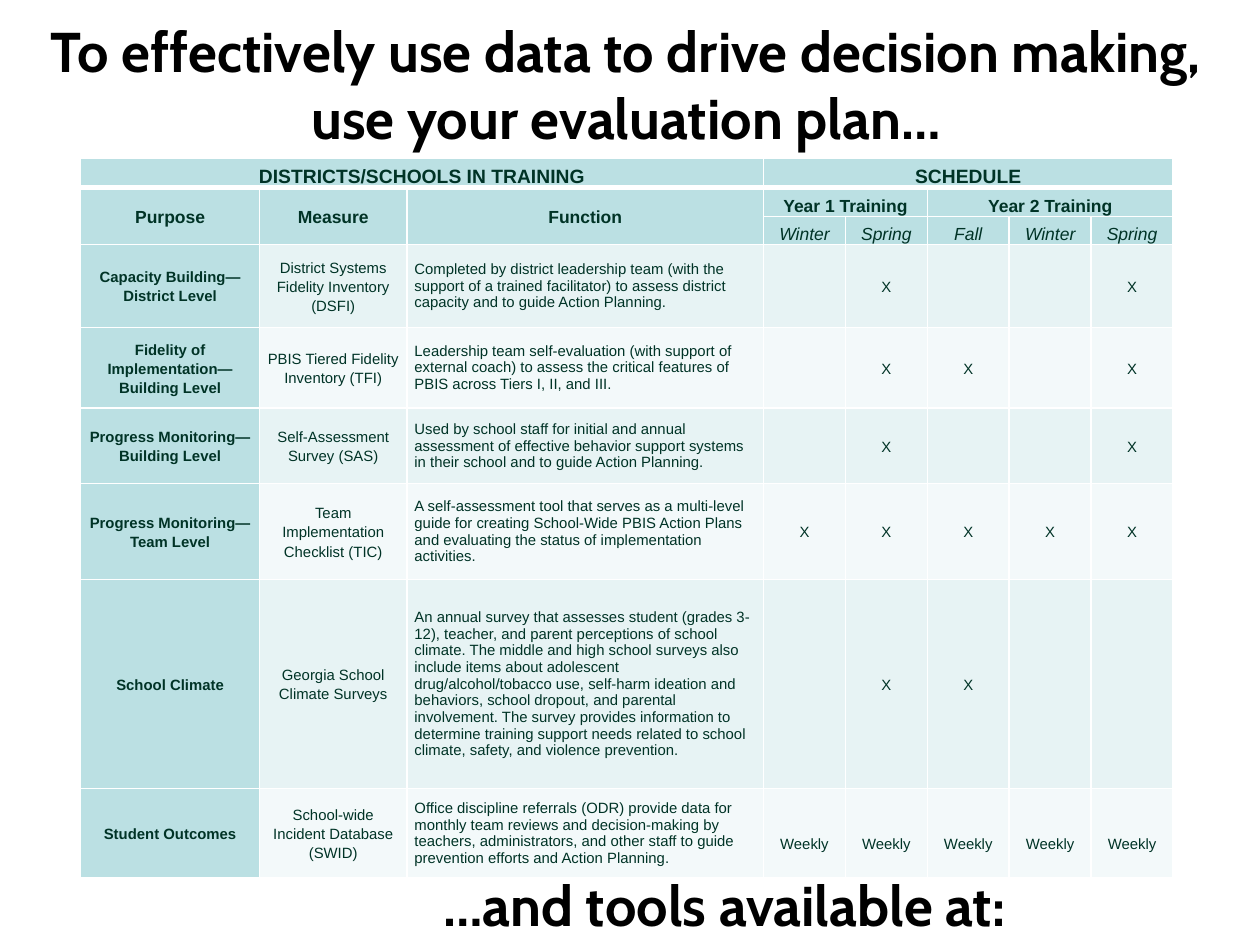
from dataclasses import dataclass
from typing import NamedTuple

from lxml.etree import SubElement
from pptx import Presentation
from pptx.dml.color import RGBColor as Rgb
from pptx.enum.text import MSO_ANCHOR as Anchor, MSO_AUTO_SIZE as Fit, PP_ALIGN as Align
from pptx.oxml.ns import qn
from pptx.util import Inches, Pt


@dataclass(frozen=True)
class Theme:
    black: str = "000000"
    ink: str = "003326"
    head: str = "BBE0E3"
    bands: tuple = ("E7F3F4", "F3F9FA")
    rule: str = "FFFFFF"
    title_font: str = "Cabin"
    font: str = "Arial"
    title: float = 32
    group: float = 11
    label: float = 10
    body: float = 8.5
    thin: float = 1
    thick: float = 3
    lead: float = 1.15


class Box(NamedTuple):
    """Left, top, width and height in percent of the slide."""
    left: float
    top: float
    width: float
    height: float


class Head(NamedTuple):
    text: str
    row: int
    col: int
    rows: int = 1
    cols: int = 1
    size: float = 10
    italic: bool = False


class Tool(NamedTuple):
    purpose: str
    measure: str
    function: str
    marks: tuple
    drop: float = 0


THEME = Theme()
WIDE, HIGH = Inches(10), Inches(7.5)
TITLE = Box(1.6, 1.07, 96.2, 15.73)
CLOSE = Box(33.4, 91.47, 47.4, 8.53)
GRID = Box(6.4, 16.8, 86.7, 76.13)
COLS = [1.42, 1.17, 2.83] + [0.65] * 5
ROWS = [0.23, 0.23, 0.22, 0.66, 0.64, 0.6, 0.76, 1.66, 0.71]
FIRST = 3  # row and column where the tools and the seasons start
SEASONS = ["Winter", "Spring", "Fall", "Winter", "Spring"]

HEADS = [
    Head("DISTRICTS/SCHOOLS IN TRAINING", 0, 0, cols=3, size=THEME.group),
    Head("SCHEDULE", 0, 3, cols=5, size=THEME.group),
    *(Head(text, 1, col, rows=2) for col, text in enumerate(["Purpose", "Measure", "Function"])),
    Head("Year 1 Training", 1, 3, cols=2),
    Head("Year 2 Training", 1, 5, cols=3),
    *(Head(text, 2, col, italic=True) for col, text in enumerate(SEASONS, FIRST)),
]

TOOLS = [
    Tool("Capacity Building—District Level", "District Systems Fidelity Inventory (DSFI)",
         "Completed by district leadership team (with the support of a trained facilitator) "
         "to assess district capacity and to guide Action Planning.",
         ("", "X", "", "", "X")),
    Tool("Fidelity of Implementation—Building Level", "PBIS Tiered Fidelity Inventory (TFI)",
         "Leadership team self-evaluation (with support of external coach) to assess "
         "the critical features of PBIS across Tiers I, II, and III.",
         ("", "X", "X", "", "X")),
    Tool("Progress Monitoring—Building Level", "Self-Assessment Survey (SAS)",
         "Used by school staff for initial and annual assessment of effective behavior "
         "support systems in their school and to guide Action Planning.",
         ("", "X", "", "", "X")),
    Tool("Progress Monitoring—Team Level", "Team Implementation Checklist (TIC)",
         "A self-assessment tool that serves as a multi-level guide for creating School-Wide "
         "PBIS Action Plans and evaluating the status of implementation activities.",
         ("X",) * 5),
    Tool("School Climate", "Georgia School Climate Surveys",
         "An annual survey that assesses student (grades 3-12), teacher, and parent perceptions "
         "of school climate. The middle and high school surveys also include items about "
         "adolescent drug/alcohol/tobacco use, self-harm ideation and behaviors, school dropout, "
         "and parental involvement. The survey provides information to determine training "
         "support needs related to school climate, safety, and violence prevention.",
         ("", "X", "X", "", "")),
    Tool("Student Outcomes", "School-wide Incident Database (SWID)",
         "Office discipline referrals (ODR) provide data for monthly team reviews and "
         "decision-making by teachers, administrators, and other staff to guide prevention "
         "efforts and Action Planning.",
         ("Weekly",) * 5, drop=0.16),
]


def place(box: Box) -> tuple:
    return (int(WIDE * box.left / 100), int(HIGH * box.top / 100),
            int(WIDE * box.width / 100), int(HIGH * box.height / 100))


def style(par, font: str, size: float, color: str, bold=False, italic=False) -> None:
    par.font.name, par.font.size = font, Pt(size)
    par.font.bold, par.font.italic = bold, italic
    par.font.color.rgb = Rgb.from_string(color)


def headline(shape, box: Box, lines: list, align: Align) -> None:
    shape.left, shape.top, shape.width, shape.height = place(box)
    frame = shape.text_frame
    frame.auto_size, frame.word_wrap = Fit.NONE, False
    frame.vertical_anchor = Anchor.TOP
    frame.text = "\n".join(lines)
    for par in frame.paragraphs:
        par.alignment = align
        style(par, THEME.title_font, THEME.title, THEME.black, bold=True)


def rule(cell, row: int) -> None:
    """Draw the white cell borders, thick between the first two rows."""
    props = cell._tc.get_or_add_tcPr()
    for side in "LRTB":
        heavy = (row, side) in ((0, "B"), (1, "T"))
        width = THEME.thick if heavy else THEME.thin
        line = SubElement(props, qn(f"a:ln{side}"), w=str(Pt(width)))
        SubElement(SubElement(line, qn("a:solidFill")), qn("a:srgbClr"), val=THEME.rule)


def write(cell, text: str, size: float = THEME.body, bold=False, italic=False,
          anchor: Anchor = Anchor.MIDDLE, center=True, drop: float = 0) -> None:
    cell.margin_left = cell.margin_right = Inches(0.06)
    cell.margin_top, cell.margin_bottom = Inches(drop), 0
    cell.vertical_anchor = anchor
    cell.text = text
    par = cell.text_frame.paragraphs[0]
    if center:
        par.alignment, par.line_spacing = Align.CENTER, THEME.lead
    style(par, THEME.font, size, THEME.ink, bold, italic)


def plan(shapes) -> None:
    """Build the table of tools and their schedule."""
    table = shapes.add_table(len(ROWS), len(COLS), *place(GRID)).table
    table.first_row = table.horz_banding = False
    for col, width in zip(table.columns, COLS):
        col.width = Inches(width)
    for num, high in enumerate(ROWS):
        table.rows[num].height = Inches(high)
        for col in range(len(COLS)):
            cell = table.cell(num, col)
            head = num < FIRST or col == 0
            color = THEME.head if head else THEME.bands[(num - FIRST) % 2]
            rule(cell, num)
            cell.fill.solid()
            cell.fill.fore_color.rgb = Rgb.from_string(color)
            write(cell, "")
    for head in HEADS:
        cell = table.cell(head.row, head.col)
        if head.rows * head.cols > 1:
            cell.merge(table.cell(head.row + head.rows - 1, head.col + head.cols - 1))
        anchor = Anchor.MIDDLE if head.rows > 1 else Anchor.BOTTOM
        write(cell, head.text, head.size, not head.italic, head.italic, anchor)
    for num, tool in enumerate(TOOLS, FIRST):
        write(table.cell(num, 0), tool.purpose, bold=True)
        write(table.cell(num, 1), tool.measure)
        write(table.cell(num, 2), tool.function, center=False)
        for col, mark in enumerate(tool.marks, FIRST):
            write(table.cell(num, col), mark, drop=tool.drop)


def main() -> None:
    deck = Presentation()
    deck.slide_width, deck.slide_height = WIDE, HIGH
    shapes = deck.slides.add_slide(deck.slide_layouts[5]).shapes
    headline(shapes.title, TITLE, ["To effectively use data to drive decision making,",
                                   "use your evaluation plan…"], Align.CENTER)
    headline(shapes.add_textbox(*place(CLOSE)), CLOSE, ["…and tools available at:"], Align.RIGHT)
    plan(shapes)
    deck.save("out.pptx")


if __name__ == "__main__":
    main()
